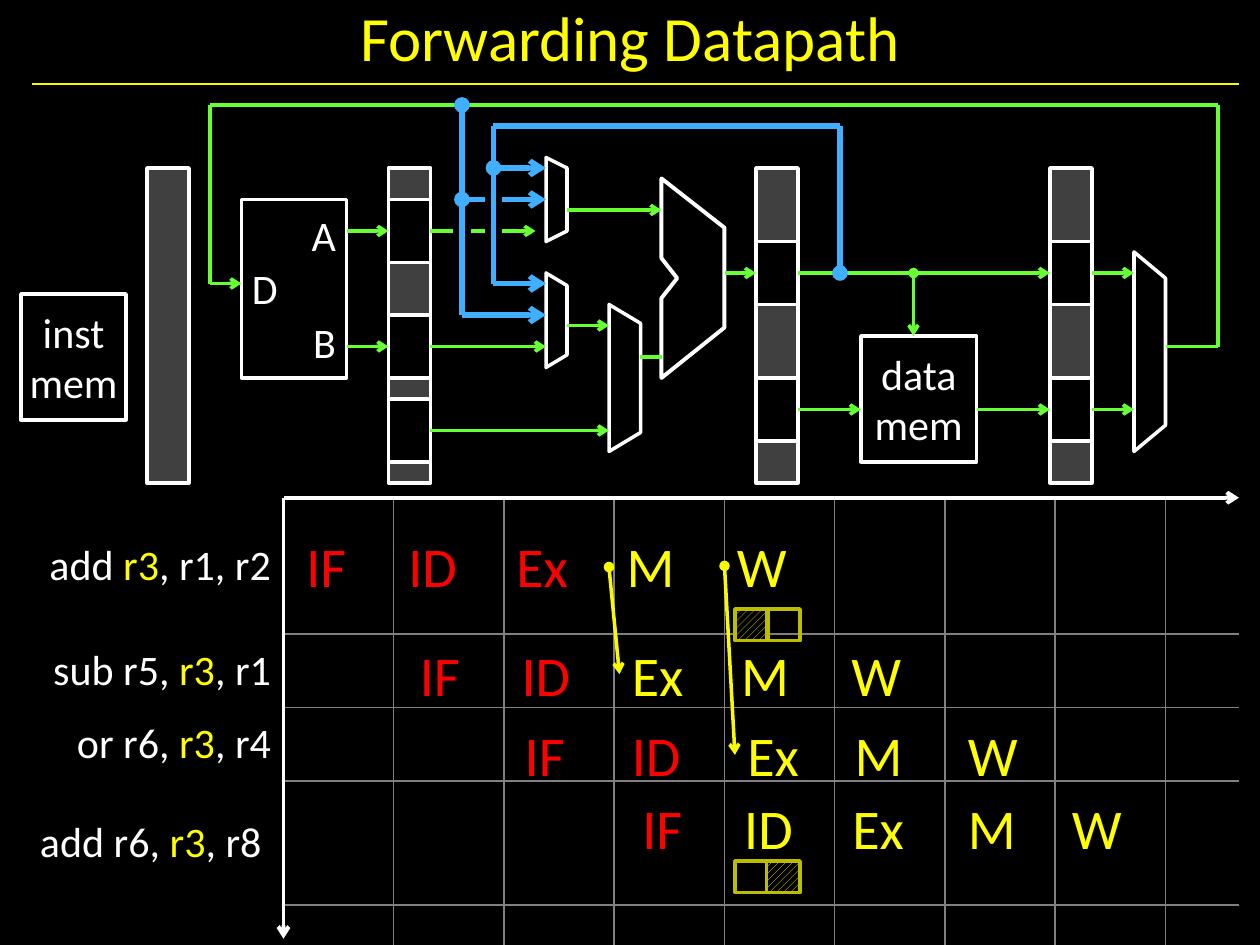
from dataclasses import dataclass

from lxml.etree import SubElement
from pptx import Presentation
from pptx.dml.color import RGBColor
from pptx.enum.dml import MSO_PATTERN
from pptx.enum.shapes import MSO_CONNECTOR, MSO_SHAPE
from pptx.enum.text import MSO_ANCHOR, PP_ALIGN
from pptx.oxml import parse_xml
from pptx.oxml.ns import nsdecls, qn
from pptx.util import Pt

PX = 7620


@dataclass(frozen=True)
class Theme:
    font: str = "Calibri"
    title_size: int = 36
    stage_size: int = 32
    label_size: int = 24
    black: str = "000000"
    white: str = "FFFFFF"
    yellow: str = "FFFF00"
    gold: str = "F9F900"
    olive: str = "BDBD00"
    red: str = "FF0000"
    green: str = "66FF33"
    blue: str = "40AFFF"
    dark: str = "404040"
    grid: str = "808080"


@dataclass(frozen=True)
class Box:
    left: int
    top: int
    width: int
    height: int

    def inner(self, x, y, width, height):
        return Box(self.left + x, self.top + y, width, height)

    def emu(self):
        return [value * PX for value in (self.left, self.top, self.width, self.height)]


THEME = Theme()


def rgb(color):
    return RGBColor.from_string(color)


def format_span(span, size, color):
    span.font.name = THEME.font
    span.font.size = Pt(size)
    span.font.color.rgb = rgb(color)


def write(frame, text, size, color, align=PP_ALIGN.CENTER, inset=0, anchor=MSO_ANCHOR.MIDDLE, wrap=True):
    frame.word_wrap = wrap
    frame.vertical_anchor = anchor
    frame.margin_left = frame.margin_right = inset * PX
    frame.margin_top = frame.margin_bottom = inset // 2 * PX
    para = frame.paragraphs[0]
    para.text = text
    para.alignment = align
    for span in para.runs:
        format_span(span, size, color)


def style_shape(shape, fill, line, width=2):
    shape.shadow.inherit = False
    if fill:
        shape.fill.solid()
        shape.fill.fore_color.rgb = rgb(fill)
    else:
        shape.fill.background()
    if line:
        shape.line.color.rgb = rgb(line)
        shape.line.width = Pt(width)
    else:
        shape.line.fill.background()
    return shape


def add_rectangle(page, box, fill=THEME.black, line=THEME.white):
    shape = page.shapes.add_shape(MSO_SHAPE.RECTANGLE, *box.emu())
    return style_shape(shape, fill, line)


def add_outline(page, box, points, fill, width=2):
    corners = [(box.left + x, box.top + y) for x, y in points]
    builder = page.shapes.build_freeform(*corners[0], scale=PX)
    builder.add_line_segments(corners[1:], close=True)
    return style_shape(builder.convert_to_shape(), fill, THEME.white, width)


def add_wire(page, box, start, end, color, width=2, head=None, tail=None):
    ends = [(origin + value) * PX for point in (start, end)
            for origin, value in zip((box.left, box.top), point)]
    wire = page.shapes.add_connector(MSO_CONNECTOR.STRAIGHT, *ends)
    wire.line.color.rgb = rgb(color)
    wire.line.width = Pt(width)
    line = wire.line._get_or_add_ln()
    for tag, kind in (("a:headEnd", head), ("a:tailEnd", tail)):
        if kind:
            SubElement(line, qn(tag)).set("type", kind)
    SubElement(wire._element.spPr, qn("a:effectLst"))


def add_title(page, box):
    title = page.shapes.add_textbox(*box.emu())
    write(title.text_frame, "Forwarding Datapath", THEME.title_size, THEME.yellow)
    add_wire(page, box, (0, 80), (1150, 80), THEME.gold, 0.75)


def add_datapath(page, box):
    for x, slots in ((120, ()), (350, (90, 200, 280)), (700, (130, 260)), (980, (130, 260))):
        add_rectangle(page, box.inner(x, 60, 40, 300), THEME.dark)
        for y in slots:
            add_rectangle(page, box.inner(x, y, 40, 60))

    for text, place in (("inst\nmem", (0, 180, 100, 120)), ("data\nmem", (800, 220, 110, 120))):
        memory = add_rectangle(page, box.inner(*place))
        write(memory.text_frame, text, THEME.label_size, THEME.white)

    add_rectangle(page, box.inner(210, 90, 100, 170))
    for port, x, y, align in (("D", 220, 150, PP_ALIGN.LEFT), ("B", 240, 201, PP_ALIGN.RIGHT),
                              ("A", 240, 100, PP_ALIGN.RIGHT)):
        label = add_rectangle(page, box.inner(x, y, 60, 48), line=None)
        write(label.text_frame, port, THEME.label_size, THEME.white, align)

    alu = ((0, 0), (60, 47), (60, 142), (0, 190), (0, 114), (15, 95), (0, 76))
    add_outline(page, box.inner(610, 70, 60, 190), alu, None, 2.25)
    for x, y, width, height in ((560, 190, 30, 140), (1060, 140, 30, 190),
                                (500, 160, 20, 90), (500, 50, 20, 80)):
        slope = round(height * 0.13)
        mux = ((0, 0), (width, slope), (width, height - slope), (0, height))
        add_outline(page, box.inner(x, y, width, height), mux, THEME.black)

    for left, right, y in ((310, 350, 230), (310, 350, 120), (670, 700, 160), (520, 560, 210),
                           (390, 560, 310), (520, 610, 100), (740, 980, 160), (740, 800, 290),
                           (910, 980, 290), (1020, 1060, 290), (1020, 1060, 160),
                           (390, 490, 120), (390, 500, 230), (180, 210, 170)):
        add_wire(page, box, (left, y), (right, y), THEME.green, tail="arrow")
    add_wire(page, box, (850, 160), (850, 220), THEME.green, head="oval", tail="arrow")
    write_back = ((1090, 230), (1140, 230), (1140, 0), (180, 0), (180, 170))
    for start, end in (((590, 240), (610, 240)), *zip(write_back, write_back[1:])):
        add_wire(page, box, start, end, THEME.green)

    for x, y, head in ((420, 200, None), (450, 170, None), (420, 90, "oval")):
        add_wire(page, box, (x, y), (500, y), THEME.blue, 3, head, "arrow")
    for x, top, bottom in ((420, 110, 160), (450, 60, 150)):
        add_wire(page, box, (x, bottom), (x, top), THEME.black, 10)
    for start, end, tail in (((780, 20), (450, 20), None), ((780, 20), (780, 160), "oval"),
                             ((450, 170), (450, 20), None), ((420, 200), (420, 0), "oval")):
        add_wire(page, box, start, end, THEME.blue, 3, tail=tail)
    add_wire(page, box, (450, 60), (500, 60), THEME.blue, 3, "oval", "arrow")


def set_borders(cell, edges):
    properties = cell._tc.get_or_add_tcPr()
    for index, (side, visible) in enumerate(zip("LRTB", edges)):
        fill = f'<a:solidFill><a:srgbClr val="{THEME.grid}"/></a:solidFill>' if visible else "<a:noFill/>"
        properties.insert(index, parse_xml(f'<a:ln{side} {nsdecls("a")} w="12700">{fill}</a:ln{side}>'))


def add_grid(page, box):
    instructions = (("add ", ", r1, r2"), ("sub r5, ", ", r1"), ("or r6, ", ", r4"), ("add r6, ", ", r8 "))
    widths, heights = [240] + [105] * 8 + [70], [130, 70, 70, 118, 38]
    table = page.shapes.add_table(len(heights), len(widths), *box.emu()).table
    table.first_row = table.horz_banding = False
    for column, width in zip(table.columns, widths):
        column.width = width * PX
    for r, (row, height) in enumerate(zip(table.rows, heights)):
        row.height = height * PX
        for c, cell in enumerate(row.cells):
            cell.margin_left = cell.margin_right = cell.margin_top = cell.margin_bottom = 0
            cell.fill.background()
            set_borders(cell, (c > 1, 0 < c < len(widths) - 1, c and r, c and r < len(heights) - 1))
    for r, (before, after) in enumerate(instructions):
        cell = table.cell(r, 0)
        cell.vertical_anchor = MSO_ANCHOR.MIDDLE
        cell.margin_right = 12 * PX
        para = cell.text_frame.paragraphs[0]
        para.alignment = PP_ALIGN.RIGHT
        for text, color in ((before, THEME.white), ("r3", THEME.yellow), (after, THEME.white)):
            span = para.add_run()
            span.text = text
            format_span(span, THEME.label_size, color)


def add_register_access(page, box, hatched):
    for half in range(2):
        cell = add_rectangle(page, box.inner(30 * half, 0, 32, 30), None, THEME.olive)
        if half == hatched:
            cell.fill.patterned()
            cell.fill.pattern = MSO_PATTERN.WIDE_UPWARD_DIAGONAL
            cell.fill.fore_color.rgb = rgb(THEME.yellow)
            cell.fill.back_color.rgb = rgb(THEME.black)


def add_timeline(page, box):
    add_grid(page, box)
    for end in ((240, 420), (1150, 0)):
        add_wire(page, box, (240, 0), end, THEME.white, 2.25, tail="arrow")

    stages = (("IF", 62), ("ID", 71), ("Ex", 74), ("M", 71), ("W", 72))
    for y, red_count, lefts in ((26, 3, (250, 347, 450, 555, 660)), (130, 2, (358, 455, 560, 664, 769)),
                                (206, 2, (458, 560, 670, 772, 880)), (276, 1, (570, 667, 770, 880, 979))):
        for index, ((stage, width), x) in enumerate(zip(stages, lefts)):
            label = page.shapes.add_textbox(*box.inner(x, y, width, 77).emu())
            color = THEME.red if index < red_count else THEME.yellow
            write(label.text_frame, stage, THEME.stage_size, color, PP_ALIGN.LEFT, 12, MSO_ANCHOR.TOP, False)

    for start, end in (((550, 66), (560, 168)), ((660, 65), (670, 245))):
        add_wire(page, box, start, end, THEME.gold, head="oval", tail="arrow")
    for hatched, y in enumerate((106, 346)):
        add_register_access(page, box.inner(670, y, 62, 30), hatched)


def main():
    deck = Presentation()
    deck.slide_width, deck.slide_height = 1200 * PX, 900 * PX
    page = deck.slides.add_slide(deck.slide_layouts[6])
    page.background.fill.solid()
    page.background.fill.fore_color.rgb = rgb(THEME.black)
    add_title(page, Box(30, 0, 1140, 70))
    add_timeline(page, Box(30, 474, 1150, 426))
    add_datapath(page, Box(20, 100, 1140, 360))
    deck.save("out.pptx")


if __name__ == "__main__":
    main()
